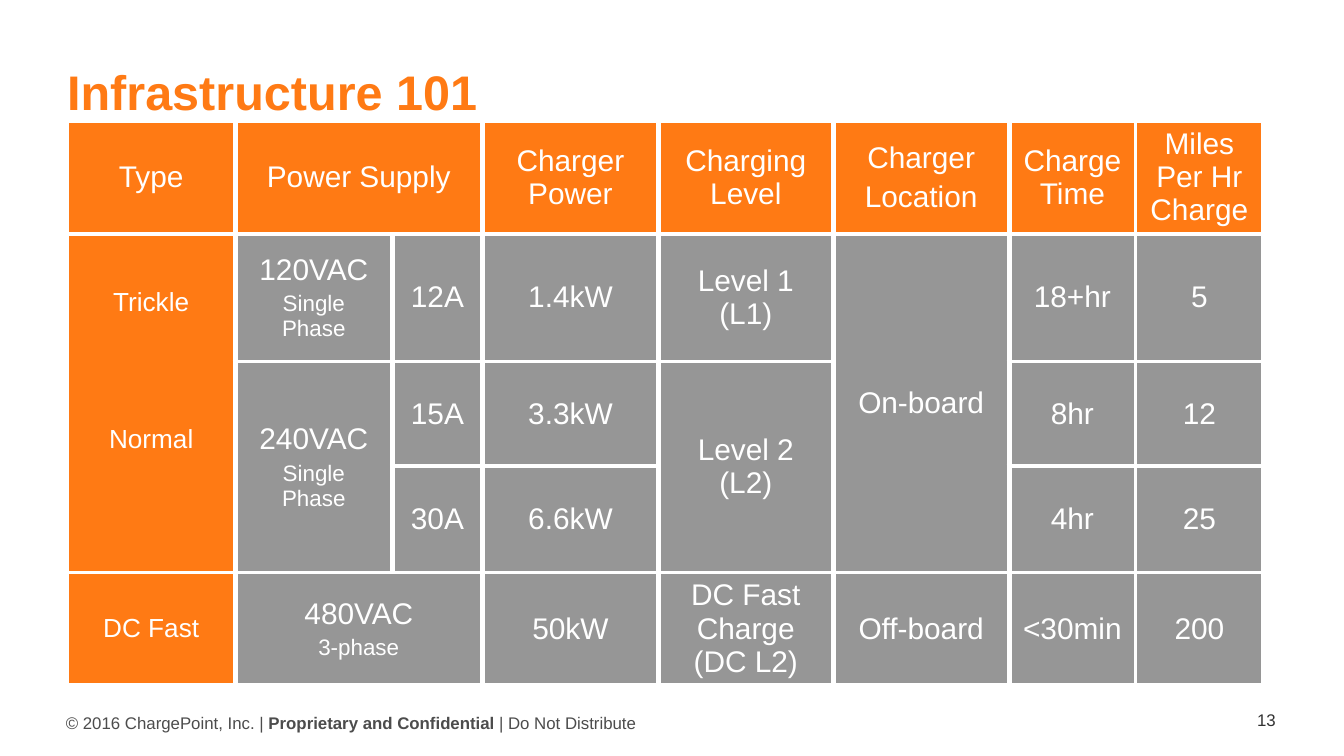
"""Build the Infrastructure 101 slide with its charger comparison table."""
from lxml.etree import SubElement
from pptx import Presentation
from pptx.dml.color import RGBColor
from pptx.enum.text import MSO_ANCHOR, PP_ALIGN
from pptx.oxml.ns import qn
from pptx.util import Inches, Pt

ORANGE, GRAY, WHITE = "FF7A14", "7A7A7A", "FFFFFF"


def color(value):
    """Turn a hex string into a colour."""
    return RGBColor.from_string(value)


def add_span(para, text, size, ink, bold=False):
    """Add one formatted run to a paragraph."""
    span = para.add_run()
    span.text = text
    span.font.name = "Arial"
    span.font.size = Pt(size)
    span.font.bold = bold
    span.font.color.rgb = color(ink)


deck = Presentation()
deck.slide_width = Inches(10)
deck.slide_height = deck.slide_width * 9 // 16
page = deck.slides.add_slide(deck.slide_layouts[6])

text_boxes = [
    (0.49, 5.25, 4.38, 0.25, (0, 0.05, 0.1, 0.05), False, MSO_ANCHOR.TOP, PP_ALIGN.LEFT,
     [("© 2016 ChargePoint, Inc. | ", 9, "4C4C4C", False),
      ("Proprietary and Confidential ", 9, "4C4C4C", True),
      ("| Do Not Distribute", 9, "4C4C4C", False)]),
    (0.5, 0.46, 9, 0.44, (0, 0, 0, 0), True, MSO_ANCHOR.TOP, PP_ALIGN.LEFT,
     [("Infrastructure 101", 26, ORANGE, True)]),
    (8.42, 5.23, 1.17, 0.25, (0.1, 0.05, 0.1, 0.05), True, MSO_ANCHOR.MIDDLE, PP_ALIGN.RIGHT,
     [("13", 9, "323232", False)]),
]
for left, top, width, height, margins, wrap, anchor, alignment, spans in text_boxes:
    box = page.shapes.add_textbox(Inches(left), Inches(top), Inches(width), Inches(height))
    frame = box.text_frame
    frame.word_wrap = wrap
    frame.vertical_anchor = anchor
    frame.margin_left, frame.margin_top, frame.margin_right, frame.margin_bottom = map(Inches, margins)
    para = frame.paragraphs[0]
    para.alignment = alignment
    for span in spans:
        add_span(para, *span)

column_widths = [1.25, 1.17, 0.67, 1.31, 1.3, 1.31, 0.94, 0.95]
row_heights = [0.84, 0.95, 0.78, 0.79, 0.84]
rows = [
    [["Type"], ["Power Supply"], [], ["Charger Power"], ["Charging Level"],
     ["Charger", "Location"], ["Charge Time"], ["Miles Per Hr Charge"]],
    [["Trickle", "Normal"], ["120VAC", "Single Phase"], ["12A"], ["1.4kW"], ["Level 1 (L1)"],
     ["On-board"], ["18+hr"], ["5"]],
    [[], ["240VAC", "Single Phase"], ["15A"], ["3.3kW"], ["Level 2 (L2)"], [], ["8hr"], ["12"]],
    [[], [], ["30A"], ["6.6kW"], [], [], ["4hr"], ["25"]],
    [["DC Fast"], ["480VAC", "3-phase"], [], ["50kW"], ["DC Fast Charge (DC L2)"],
     ["Off-board"], ["<30min"], ["200"]],
]
merges = [(0, 1, 0, 2), (1, 0, 3, 0), (1, 5, 3, 5), (2, 1, 3, 1), (2, 4, 3, 4), (4, 1, 4, 2)]

table = page.shapes.add_table(len(rows), len(column_widths), Inches(0.5), Inches(0.9),
                              Inches(sum(column_widths)), Inches(sum(row_heights))).table
table.first_row = table.horz_banding = False
for column, width in zip(table.columns, column_widths):
    column.width = Inches(width)
for row, height in zip(table.rows, row_heights):
    row.height = Inches(height)
for top, left, bottom, right in merges:
    table.cell(top, left).merge(table.cell(bottom, right))

for row_index, row in enumerate(rows):
    for column_index, lines in enumerate(row):
        cell = table.cell(row_index, column_index)
        cell.vertical_anchor = MSO_ANCHOR.MIDDLE
        cell.margin_top = cell.margin_bottom = Inches(0.02)
        properties = cell._tc.get_or_add_tcPr()
        left_width = 2.25 if column_index in (0, 7) else 3
        right_width = 2.25 if column_index >= 6 else 3
        for side, width in (("L", left_width), ("R", right_width), ("T", 2.25), ("B", 2.25)):
            border = SubElement(properties, qn(f"a:ln{side}"), w=str(Pt(width)))
            SubElement(SubElement(border, qn("a:solidFill")), qn("a:srgbClr"), val=WHITE)
        is_heading = row_index == 0 or column_index == 0
        cell.fill.solid()
        cell.fill.fore_color.rgb = color(ORANGE if is_heading else GRAY)
        if not is_heading:
            SubElement(properties.find(qn("a:solidFill"))[0], qn("a:alpha"), val="79000")
        for line_index, line in enumerate(lines):
            para = cell.text_frame.add_paragraph() if line_index else cell.text_frame.paragraphs[0]
            para.alignment = PP_ALIGN.CENTER
            size = 14 if column_index == 0 and row_index else 16
            if line_index:
                size = size if is_heading else 12
                para.space_before = Pt(size * 0.2)
            add_span(para, line, size, WHITE)

type_cell = table.cell(1, 0)
type_cell.margin_bottom = Inches(0.5)
type_cell.text_frame.paragraphs[1].space_before = Pt(58)

deck.save("out.pptx")
